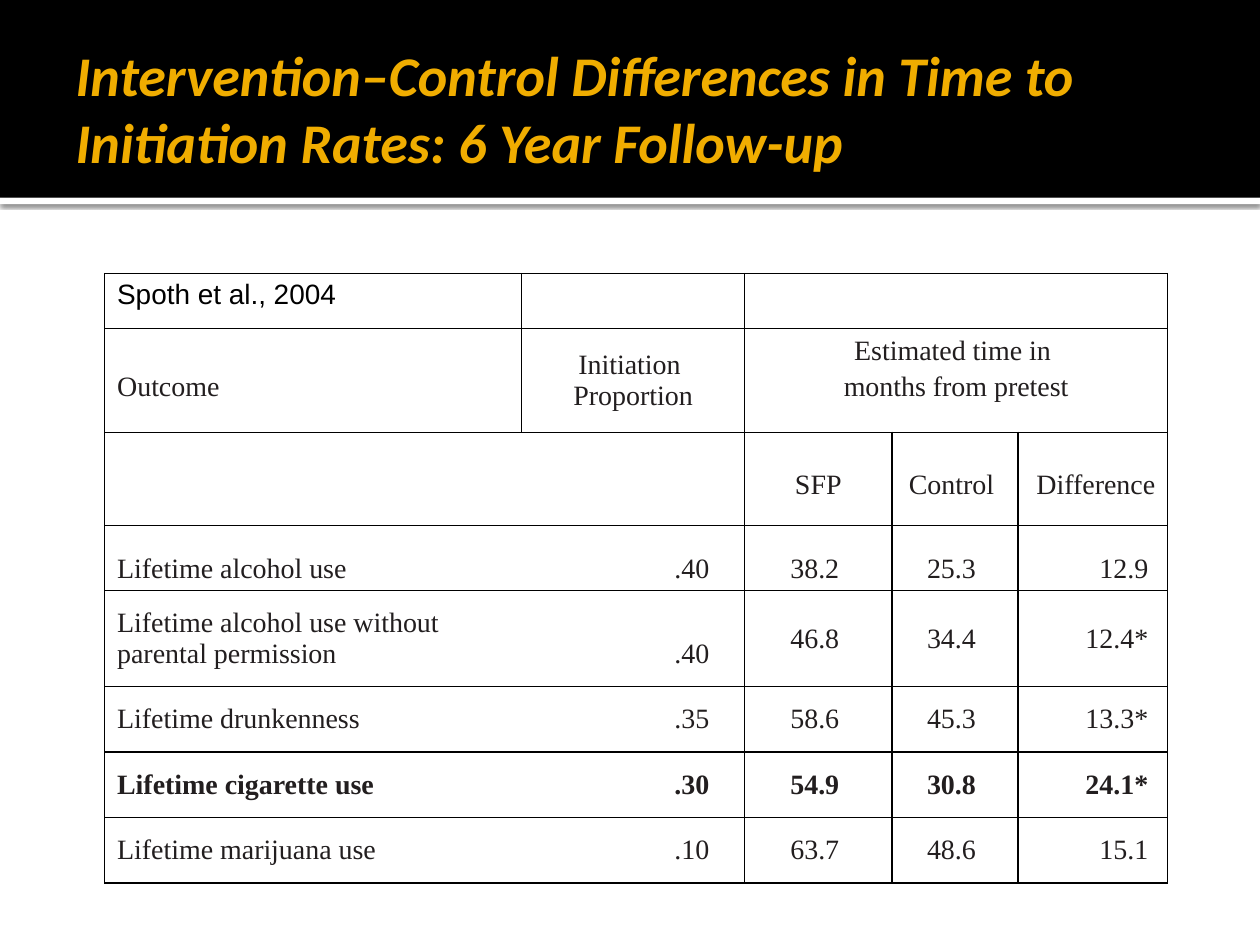
from lxml import etree
from pptx import Presentation
from pptx.dml.color import RGBColor
from pptx.enum.shapes import MSO_SHAPE
from pptx.enum.text import MSO_ANCHOR, MSO_AUTO_SIZE, PP_ALIGN
from pptx.oxml.ns import qn
from pptx.util import Inches, Pt

LEFT, CENTER, RIGHT = PP_ALIGN.LEFT, PP_ALIGN.CENTER, PP_ALIGN.RIGHT
TOP, MIDDLE, BOTTOM = MSO_ANCHOR.TOP, MSO_ANCHOR.MIDDLE, MSO_ANCHOR.BOTTOM
COLORS = {"black": "000000", "white": "FFFFFF", "gold": "F0AD00", "ink": "221E1F"}
SERIF = "Times New Roman"

TITLE = "Intervention–Control Differences in Time to Initiation Rates: 6 Year Follow-up"
SOURCE = "Spoth et al., 2004"
MEASURES = [("SFP", CENTER), ("Control ", CENTER), ("Difference ", RIGHT)]
OUTCOMES = [
    (["Lifetime alcohol use"], ".40", ["38.2 ", "25.3 ", "12.9 "]),
    (["Lifetime alcohol use without", "parental permission"], ".40",
     ["46.8 ", "34.4 ", "12.4* "]),
    (["Lifetime drunkenness"], ".35", ["58.6 ", "45.3 ", "13.3* "]),
    (["Lifetime cigarette use"], ".30", ["54.9 ", "30.8 ", "24.1* "]),
    (["Lifetime marijuana use"], ".10", ["63.7 ", "48.6 ", "15.1 "]),
]
BOLD_OUTCOME = 3
COLS = [3.31, 1.77, 1.17, 1, 1.19]
ROWS = [0.44, 0.82, 0.74, 0.52, 0.76, 0.52, 0.52, 0.52]
MERGES = [(0, 2, 4), (1, 2, 4)] + [(row, 0, 1) for row in range(2, len(ROWS))]
PROPORTION_TAB = 4.7


def rgb(name):
    return RGBColor.from_string(COLORS[name])


def write(tf, lines, size=16, font=SERIF, color="ink", bold=False, italic=False,
          align=LEFT, before=0):
    for i, line in enumerate(lines):
        p = tf.paragraphs[0] if i == 0 else tf.add_paragraph()
        p.alignment = align
        p.space_before = Pt(before)
        r = p.add_run()
        r.text = line
        r.font.size, r.font.name = Pt(size), font
        r.font.bold, r.font.italic = bold, italic
        r.font.color.rgb = rgb(color)


def fill_cell(cell, lines, anchor=TOP, margin_top=0.05, **style):
    cell.vertical_anchor = anchor
    cell.margin_top = Inches(margin_top)
    write(cell.text_frame, lines, **style)


def add_right_tab(p, position):
    tabs = etree.SubElement(p._p.get_or_add_pPr(), qn("a:tabLst"))
    etree.SubElement(tabs, qn("a:tab"), pos=str(Inches(position)), algn="r")


def set_borders(cell, sides):
    tcPr = cell._tc.get_or_add_tcPr()
    for i, side in enumerate(sides):
        ln = etree.Element(qn("a:ln" + side), w=str(Pt(0.75)))
        fill = etree.SubElement(ln, qn("a:solidFill"))
        etree.SubElement(fill, qn("a:srgbClr"), val=COLORS["black"])
        tcPr.insert(i, ln)


def add_band(slide, top, height, color, position):
    sp = slide.shapes.add_shape(MSO_SHAPE.RECTANGLE, 0, Inches(top),
                                Inches(10), Inches(height))
    sp.shadow.inherit = False
    sp.fill.solid()
    sp.fill.fore_color.rgb = rgb(color)
    sp.line.fill.background()
    slide.shapes._spTree.insert(position, sp._element)
    return sp


def add_header(slide):
    rule = add_band(slide, 1.57, 0.05, "white", 2)
    add_band(slide, 0, 1.57, "black", 3)
    effects = rule._element.spPr.find(qn("a:effectLst"))
    shadow = etree.SubElement(effects, qn("a:outerShdw"), blurRad=str(Pt(2.5)),
                              dist=str(Pt(0.8)), dir="5400000", rotWithShape="0")
    color = etree.SubElement(shadow, qn("a:srgbClr"), val=COLORS["black"])
    etree.SubElement(color, qn("a:alpha"), val="60000")

    title = slide.shapes.title
    title.left, title.top = Inches(0.5), Inches(0.17)
    title.width, title.height = Inches(9), Inches(1.37)
    tf = title.text_frame
    tf.word_wrap = True
    tf.auto_size = MSO_AUTO_SIZE.NONE
    tf.vertical_anchor = MIDDLE
    tf.margin_left = Inches(0.1)
    tf.margin_top = tf.margin_right = tf.margin_bottom = Inches(0.05)
    write(tf, [TITLE], size=32, font="Calibri", color="gold", bold=True, italic=True)


def add_results(slide):
    frame = slide.shapes.add_table(len(ROWS), len(COLS), Inches(0.83), Inches(2.17),
                                   Inches(sum(COLS)), Inches(sum(ROWS)))
    table = frame.table
    table.first_row = table.horz_banding = False
    for column, width in zip(table.columns, COLS):
        column.width = Inches(width)
    for row, height in zip(table.rows, ROWS):
        row.height = Inches(height)
    for row, first, last in MERGES:
        table.cell(row, first).merge(table.cell(row, last))
    for cell in table.iter_cells():
        cell.fill.solid()
        cell.fill.fore_color.rgb = rgb("white")
        set_borders(cell, "RTB" if cell.is_spanned else "LRTB")
        cell.text_frame.paragraphs[0].font.size = Pt(16)

    fill_cell(table.cell(0, 0), [SOURCE], font="Arial", color="black")
    fill_cell(table.cell(1, 0), ["Outcome"], margin_top=0.34)
    fill_cell(table.cell(1, 1), ["Initiation ", "Proportion"], anchor=MIDDLE, align=CENTER)
    fill_cell(table.cell(1, 2), ["Estimated time in ", "months from pretest"],
              align=CENTER, before=3.2)
    for col, (name, align) in enumerate(MEASURES, start=2):
        fill_cell(table.cell(2, col), [name], margin_top=0.3, align=align)

    for i, (label, proportion, months) in enumerate(OUTCOMES):
        row, bold = i + 3, i == BOLD_OUTCOME
        anchor = BOTTOM if i == 0 else MIDDLE
        cell = table.cell(row, 0)
        lines = label[:-1] + [label[-1] + "\t" + proportion]
        fill_cell(cell, lines, anchor=anchor, bold=bold)
        add_right_tab(cell.text_frame.paragraphs[-1], PROPORTION_TAB)
        for col, (value, (_, align)) in enumerate(zip(months, MEASURES), start=2):
            fill_cell(table.cell(row, col), [value], anchor=anchor, bold=bold, align=align)


def main():
    prs = Presentation()
    prs.slide_width, prs.slide_height = Inches(10), Inches(7.5)
    slide = prs.slides.add_slide(prs.slide_layouts[5])
    add_header(slide)
    add_results(slide)
    prs.save("out.pptx")


if __name__ == "__main__":
    main()
